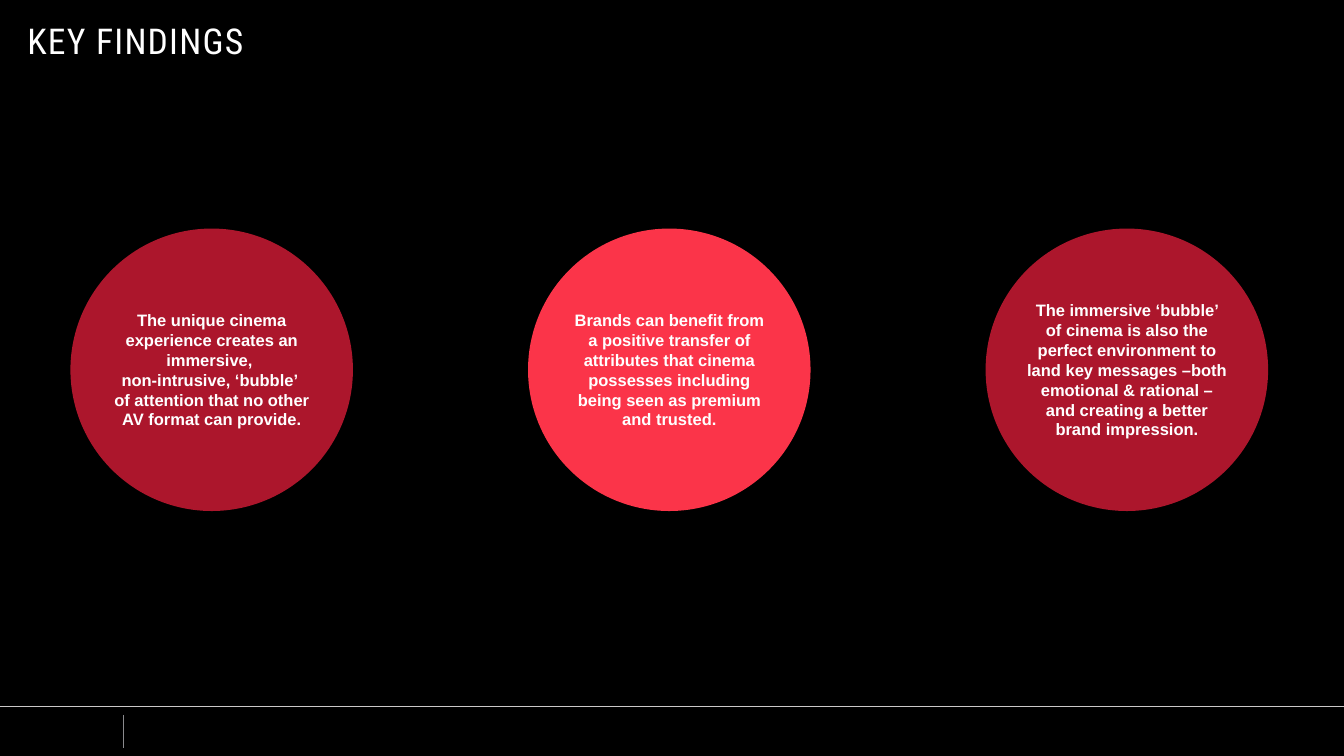
from pptx import Presentation
from pptx.dml.color import RGBColor
from pptx.enum import shapes, text
from pptx.oxml.ns import qn
from pptx.util import Inches, Pt
from lxml import etree

BLACK = RGBColor(0x00, 0x00, 0x00)
WHITE = RGBColor(0xFF, 0xFF, 0xFF)
DARK = RGBColor(0xAC, 0x16, 0x2C)
BRIGHT = RGBColor(0xFB, 0x34, 0x49)
GREY = RGBColor(0x8A, 0x8A, 0x8D)
PALE = RGBColor(0xCA, 0xC8, 0xC8)

WIDTH, HEIGHT = 14.7, 8.27
SIZE, STEP = 3.09, 5.005

# Each finding is a fill and its paragraphs; each paragraph is a list of lines.
FINDINGS = [
    (DARK, [["The unique cinema experience creates an immersive, ",
             "non-intrusive, ‘bubble’ "],
            ["of attention that no other AV format can provide."]]),
    (BRIGHT, [["Brands can benefit from a positive transfer of attributes "
               "that cinema possesses including being seen as premium "
               "and trusted."]]),
    (DARK, [["The immersive ‘bubble’ of cinema is also the perfect "
             "environment to land key messages –both emotional & rational – "
             "and creating a better brand impression."]]),
]


def set_frame(frame):
    frame.margin_left = frame.margin_right = 0
    frame.margin_top = frame.margin_bottom = 0
    frame.vertical_anchor = text.MSO_ANCHOR.MIDDLE
    frame.auto_size = text.MSO_AUTO_SIZE.NONE
    frame.word_wrap = True


def set_font(para, name, size, bold):
    font = para.font
    font.name, font.size, font.bold = name, Pt(size), bold
    font.color.rgb = WHITE


def add_title(slide, left, top, width, height):
    title = slide.shapes.title
    title.left, title.top = Inches(left), Inches(top)
    title.width, title.height = Inches(width), Inches(height)
    set_frame(title.text_frame)
    para = title.text_frame.paragraphs[0]
    para.alignment = text.PP_ALIGN.LEFT
    run = para.add_run()
    run.text = "KEY FINDINGS"
    run.font._element.set("spc", "100")
    set_font(para, "Roboto Condensed", 28, False)


def add_rule(slide, start, end, color, weight):
    rule = slide.shapes.add_connector(
        shapes.MSO_CONNECTOR.STRAIGHT, *map(Inches, start + end))
    rule.line.color.rgb = color
    rule.line.width = Pt(weight)
    etree.SubElement(rule._element.spPr, qn("a:effectLst"))


def add_footer(slide, top):
    add_rule(slide, (1.35, top + 0.09), (1.35, top + 0.45), GREY, 0.75)
    add_rule(slide, (0, top), (WIDTH, top), PALE, 0.5)


def add_circle(slide, left, top, size, fill, paras):
    circle = slide.shapes.add_shape(
        shapes.MSO_SHAPE.OVAL, *map(Inches, (left, top, size, size)))
    circle.shadow.inherit = False
    circle.fill.solid()
    circle.fill.fore_color.rgb = fill
    circle.line.fill.background()
    frame = circle.text_frame
    set_frame(frame)
    for i, lines in enumerate(paras):
        para = frame.add_paragraph() if i else frame.paragraphs[0]
        para.alignment = text.PP_ALIGN.CENTER
        for j, line in enumerate(lines):
            if j:
                para.add_line_break()
            para.add_run().text = line
        set_font(para, "Arial", 13, True)


def add_findings(slide, left, top):
    for i, (fill, paras) in enumerate(FINDINGS):
        add_circle(slide, left + i * STEP, top, SIZE, fill, paras)


def main():
    deck = Presentation()
    deck.slide_width, deck.slide_height = Inches(WIDTH), Inches(HEIGHT)
    slide = deck.slides.add_slide(deck.slide_layouts[5])
    slide.background.fill.solid()
    slide.background.fill.fore_color.rgb = BLACK
    add_footer(slide, 7.73)
    add_title(slide, 0.3, 0.22, 13.58, 0.45)
    add_findings(slide, 0.77, 2.5)
    deck.save("out.pptx")


if __name__ == "__main__":
    main()
